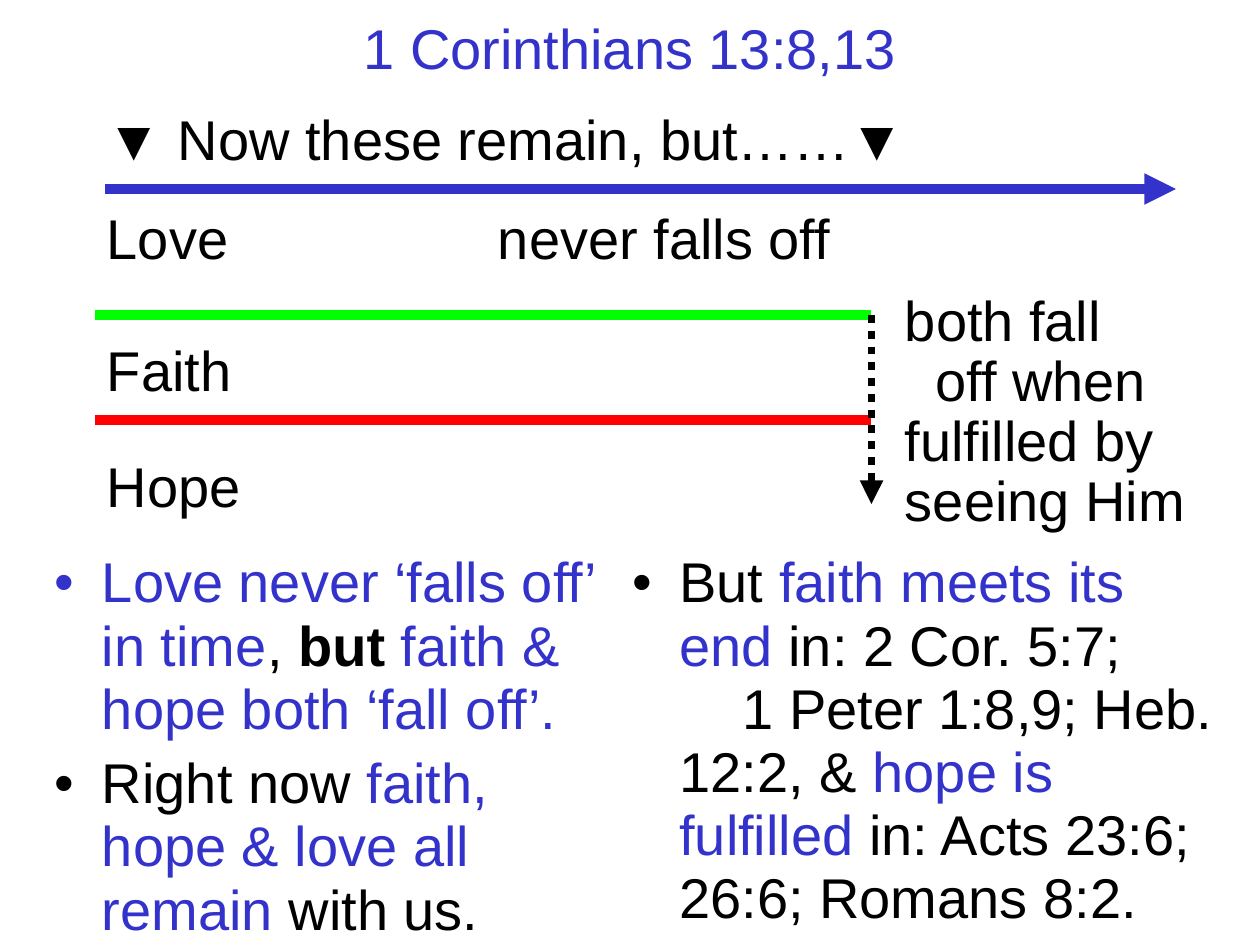
from lxml import etree
from pptx import Presentation
from pptx import util as u
from pptx.dml.color import RGBColor
from pptx.enum import dml, shapes, text
from pptx.oxml.ns import qn

PX = 7620
BLUE = RGBColor(0x33, 0x33, 0xCC)
GREEN = RGBColor(0x00, 0xFF, 0x00)
RED = RGBColor(0xFF, 0x00, 0x00)
BLACK = RGBColor(0x00, 0x00, 0x00)


def place(sp, left, top, width, height):
    sp.left, sp.top = left * PX, top * PX
    sp.width, sp.height = width * PX, height * PX
    tf = sp.text_frame
    tf.word_wrap = True
    tf.auto_size = text.MSO_AUTO_SIZE.NONE
    return tf


def add_run(p, words, color=BLACK, bold=False):
    r = p.add_run()
    r.text = words
    r.font.name = "Arial"
    r.font.size = u.Pt(32)
    r.font.bold = bold
    r.font.color.rgb = color


prs = Presentation()
prs.slide_width, prs.slide_height = 1200 * PX, 900 * PX
s = prs.slides.add_slide(prs.slide_layouts[3])
title, left_body, right_body = s.placeholders

tf = place(title, 90, 0, 1020, 90)
tf.vertical_anchor = text.MSO_ANCHOR.MIDDLE
p = tf.paragraphs[0]
p.alignment = text.PP_ALIGN.CENTER
add_run(p, "1 Corinthians 13:8,13", BLUE)

lines = [
    (100, 180, 1120, 180, BLUE, 6, True, None),
    (90, 300, 830, 300, GREEN, 6, False, None),
    (90, 400, 830, 400, RED, 6, False, None),
    (830, 300, 830, 480, BLACK, 4.5, True, dml.MSO_LINE.ROUND_DOT),
]
for x1, y1, x2, y2, color, weight, arrow, dash in lines:
    c = s.shapes.add_connector(
        shapes.MSO_CONNECTOR.STRAIGHT, x1 * PX, y1 * PX, x2 * PX, y2 * PX)
    c.line.color.rgb = color
    c.line.width = u.Pt(weight)
    if dash:
        c.line.dash_style = dash
    if arrow:
        etree.SubElement(c.line._get_or_add_ln(), qn("a:tailEnd"), type="triangle")
    etree.SubElement(c._element.spPr, qn("a:effectLst"))

LEFT, CENTER = text.PP_ALIGN.LEFT, text.PP_ALIGN.CENTER
labels = [
    (90, 184, 350, 75, LEFT, 1, [("Love", 0)]),
    (90, 310, 280, 75, LEFT, 1, [("Faith", 0)]),
    (90, 420, 280, 75, LEFT, 1, [("Hope", 0)]),
    (90, 90, 930, 75, LEFT, 1, [("▼ Now these remain, but……▼", 0)]),
    (450, 184, 380, 75, CENTER, 1, [("never falls off ", 0)]),
    (850, 270, 310, 230, LEFT, 0.89,
     [("both fall", 0), ("off when", 29), ("fulfilled by seeing Him", 0)]),
]
for x, y, w, h, align, spacing, paragraphs in labels:
    tf = place(s.shapes.add_textbox(0, 0, 0, 0), x, y, w, h)
    tf.margin_top = 10 * PX
    for i, (words, indent) in enumerate(paragraphs):
        p = tf.add_paragraph() if i else tf.paragraphs[0]
        p.alignment = align
        p.line_spacing = spacing
        if indent:
            p._p.get_or_add_pPr().set("marL", str(indent * PX))
        add_run(p, words)

bodies = [
    (left_body, 40, 560, [
        (True, [("Love never ‘falls off’ in time", BLUE), (", ", BLACK),
                ("but ", BLACK, True), ("faith & hope both ‘fall off’.", BLUE)]),
        (True, [("Right now ", BLACK), ("faith, hope & love all remain", BLUE),
                (" with us.", BLACK)]),
    ]),
    (right_body, 590, 590, [
        (True, [("But ", BLACK), ("faith meets its end", BLUE),
                (" in: 2 Cor. 5:7;", BLACK)]),
        (False, [("1 Peter 1:8,9; Heb. 12:2, & ", BLACK), ("hope is fulfilled", BLUE),
                 (" in: Acts 23:6; 26:6; Romans 8:2.", BLACK)]),
    ]),
]
for sp, x, w, paragraphs in bodies:
    tf = place(sp, x, 520, w, 380)
    for i, (bullet, runs) in enumerate(paragraphs):
        p = tf.add_paragraph() if i else tf.paragraphs[0]
        p.line_spacing = 0.94
        p.space_before = u.Pt(6.4 if bullet else 0)
        pPr = p._p.get_or_add_pPr()
        pPr.set("marL", str(45 * PX))
        pPr.set("indent", str((-45 if bullet else 60) * PX))
        if not bullet:
            etree.SubElement(pPr, qn("a:buNone"))
        for run in runs:
            add_run(p, *run)

prs.save("out.pptx")
